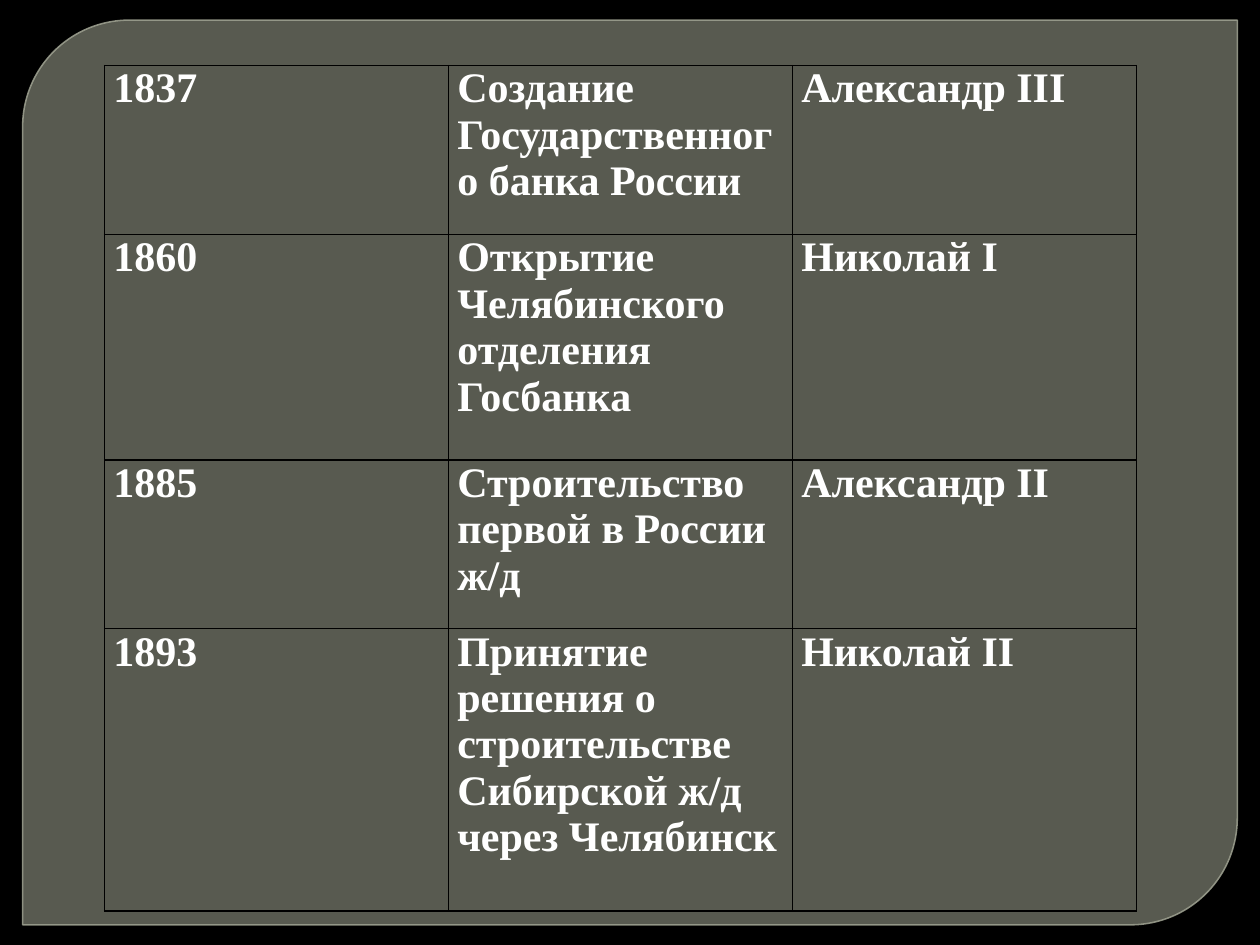
from dataclasses import dataclass

from lxml.etree import SubElement
from pptx import Presentation
from pptx.dml.color import RGBColor as RGB
from pptx.enum.shapes import MSO_SHAPE as SHAPE
from pptx.oxml import parse_xml
from pptx.oxml.ns import nsdecls, qn
from pptx.util import Inches, Pt


@dataclass(frozen=True)
class Theme:
    """Colours, font and sizes of the slide."""
    background: str = "000000"
    panel: str = "888B7B"
    panel_alpha: int = 65
    outline: str = "9DA090"
    outline_alpha: int = 88
    outline_width: float = 0.87
    border: str = "000000"
    border_width: float = 1
    text: str = "FFFFFF"
    font: str = "Times New Roman"
    size: float = 24


ROWS = [
    ("1837", "Создание Государственного банка России", "Александр III"),
    ("1860", "Открытие Челябинского отделения Госбанка", "Николай I"),
    ("1885", "Строительство первой в России ж/д", "Александр II"),
    ("1893", "Принятие решения о строительстве Сибирской ж/д через Челябинск",
     "Николай II"),
]
ROW_HEIGHTS = [1.34, 1.79, 1.34, 2.24]
COLUMN_WIDTH = 2.73


def write(tf, text, *, font, size, color, bold=False):
    """Write one formatted run into a text frame."""
    r = tf.paragraphs[0].add_run()
    r.text = text
    r.font.name, r.font.size, r.font.bold = font, Pt(size), bold
    r.font.color.rgb = RGB.from_string(color)


def paint(fill, color, alpha):
    """Give a fill a solid colour with an opacity in percent."""
    fill.solid()
    fill.fore_color.rgb = RGB.from_string(color)
    clr = fill._xPr.find(qn("a:solidFill"))[0]
    SubElement(clr, qn("a:alpha"), val=str(alpha * 1000))


class SlideBuilder:
    """Draw elements on one slide in one theme."""

    def __init__(self, slide, theme):
        """Keep the slide and theme and colour the background."""
        self.s, self.theme = slide, theme
        fill = slide.background.fill
        fill.solid()
        fill.fore_color.rgb = RGB.from_string(theme.background)

    def panel(self, left, top, width, height, rounding):
        """Add the translucent panel with two rounded corners."""
        t = self.theme
        sp = self.s.shapes.add_shape(
            SHAPE.ROUND_2_DIAG_RECTANGLE,
            Inches(left), Inches(top), Inches(width), Inches(height))
        sp.adjustments[0], sp.adjustments[1] = rounding, 0
        sp.shadow.inherit = False
        paint(sp.fill, t.panel, t.panel_alpha)
        paint(sp.line.fill, t.outline, t.outline_alpha)
        sp.line.width = Pt(t.outline_width)

    def border(self, cell):
        """Line all four sides of a cell."""
        t = self.theme
        tc_pr = cell._tc.get_or_add_tcPr()
        for i, side in enumerate("LRTB"):
            tc_pr.insert(i, parse_xml(
                f'<a:ln{side} {nsdecls("a")} w="{Pt(t.border_width)}">'
                f'<a:solidFill><a:srgbClr val="{t.border}"/></a:solidFill>'
                f'</a:ln{side}>'))

    def table(self, left, top, rows, column_width, row_heights):
        """Add an unfilled, bordered table."""
        t, columns = self.theme, len(rows[0])
        table = self.s.shapes.add_table(
            len(rows), columns, Inches(left), Inches(top),
            Inches(column_width * columns), Inches(sum(row_heights))).table
        table.first_row = table.horz_banding = False
        for column in table.columns:
            column.width = Inches(column_width)
        for row, height, texts in zip(table.rows, row_heights, rows):
            row.height = Inches(height)
            for cell, text in zip(row.cells, texts):
                cell.fill.background()
                cell.margin_left = cell.margin_right = Inches(0.07)
                cell.margin_top = cell.margin_bottom = 0
                self.border(cell)
                write(cell.text_frame, text, font=t.font, size=t.size,
                      color=t.text, bold=True)


def main():
    """Build and save the presentation."""
    prs = Presentation()
    prs.slide_width, prs.slide_height = Inches(10), Inches(7.5)
    builder = SlideBuilder(prs.slides.add_slide(prs.slide_layouts[6]), Theme())
    builder.panel(0.18, 0.16, 9.64, 7.18, rounding=0.118)
    builder.table(0.83, 0.52, ROWS, COLUMN_WIDTH, ROW_HEIGHTS)
    prs.save("out.pptx")


if __name__ == "__main__":
    main()
